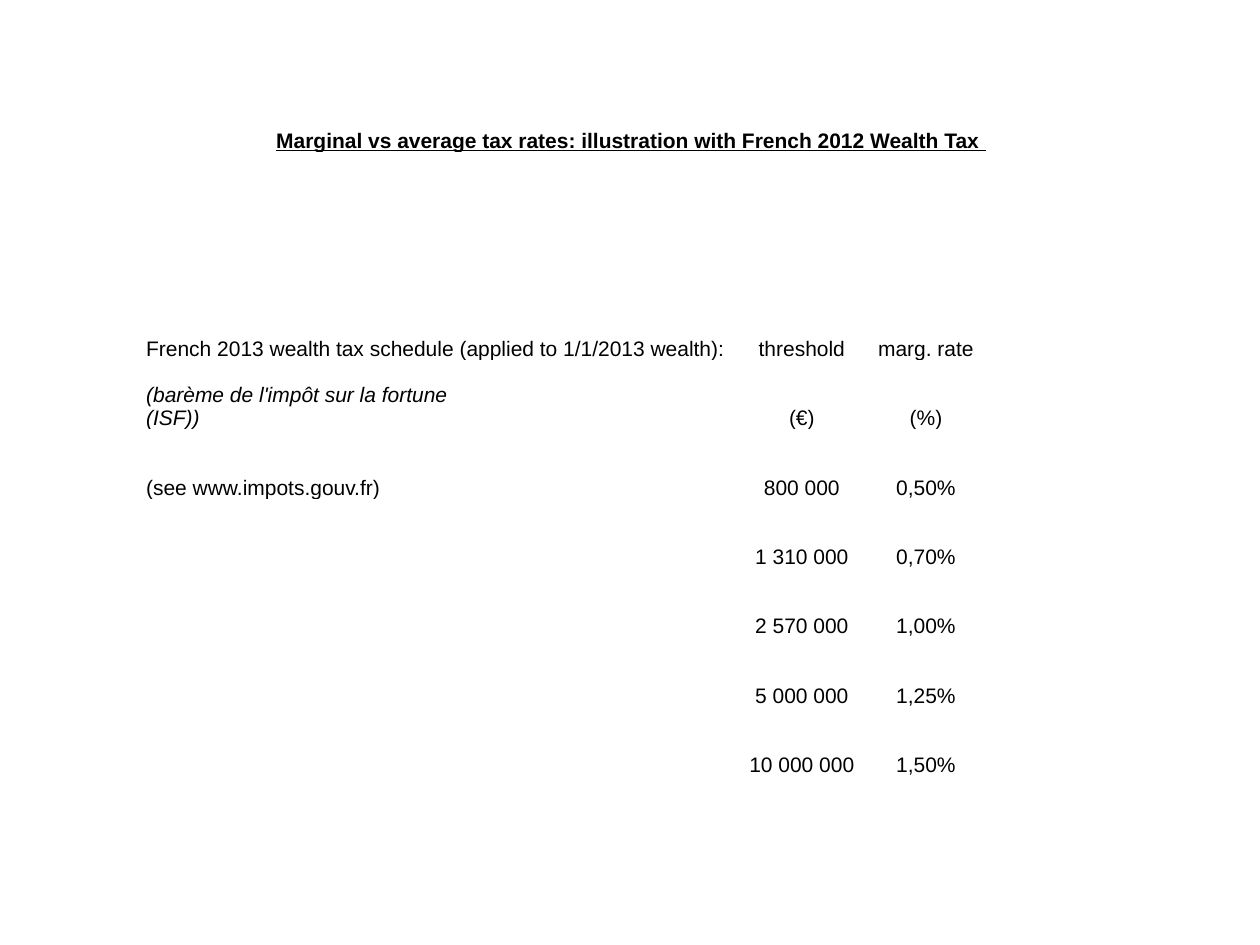
from pptx import Presentation
from pptx.dml.color import RGBColor
from pptx.enum.text import MSO_ANCHOR, PP_ALIGN
from pptx.util import Inches, Pt

BLACK = RGBColor(0x00, 0x00, 0x00)
LEFT, CENTER = PP_ALIGN.LEFT, PP_ALIGN.CENTER
BOTTOM = MSO_ANCHOR.BOTTOM

COL_WIDTHS = [0.94] * 5 + [1.03, 0.94, 1.05]
ROW_COUNT = 10
HEADER_ROW, THRESHOLD_COL = 3, 5

TITLE = "Marginal vs average tax rates: illustration with French 2012 Wealth Tax "
# text, columns spanned, font format
NOTES = [
    ("French 2013 wealth tax schedule (applied to 1/1/2013 wealth):", 5, {}),
    ("(barème de l'impôt sur la fortune (ISF))", 3, {"italic": True}),
    ("(see www.impots.gouv.fr)", 2, {}),
]
SCHEDULE = [
    ("threshold", "marg. rate"),
    ("(€)", "(%)"),
    ("800 000", "0,50%"),
    ("1 310 000", "0,70%"),
    ("2 570 000", "1,00%"),
    ("5 000 000", "1,25%"),
    ("10 000 000", "1,50%"),
]


def write_cell(cell, text, align=CENTER, **font_format):
    p = cell.text_frame.paragraphs[0]
    p.alignment = align
    r = p.add_run()
    r.text = text
    r.font.color.rgb = BLACK
    values = {"name": "Arial", "size": Pt(12), "bold": False} | font_format
    for name, value in values.items():
        setattr(r.font, name, value)


def add_plain_table(s, left, top, width, height):
    """Add a table without fills or banding, its text resting on the cell bottoms."""
    table = s.shapes.add_table(ROW_COUNT, len(COL_WIDTHS), left, top, width, height).table
    table.first_row = table.horz_banding = False
    for col, share in zip(table.columns, COL_WIDTHS):
        col.width = int(width * share / sum(COL_WIDTHS))
    cell_format = {
        "vertical_anchor": BOTTOM,
        "margin_left": Inches(0.01),
        "margin_right": Inches(0.01),
        "margin_top": Inches(0.01),
        "margin_bottom": 0,
    }
    for cell in table.iter_cells():
        cell.fill.background()
        for name, value in cell_format.items():
            setattr(cell, name, value)
    return table


def add_tax_schedule(s, left, top, width, height):
    table = add_plain_table(s, left, top, width, height)

    title = table.cell(0, 0)
    title.merge(table.cell(0, len(COL_WIDTHS) - 1))
    write_cell(title, TITLE, bold=True, underline=True)

    for row, (text, span, font_format) in enumerate(NOTES, HEADER_ROW):
        note = table.cell(row, 0)
        note.merge(table.cell(row, span - 1))
        write_cell(note, text, LEFT, **font_format)

    for row, pair in enumerate(SCHEDULE, HEADER_ROW):
        for col, text in enumerate(pair, THRESHOLD_COL):
            write_cell(table.cell(row, col), text)


def main():
    prs = Presentation()
    prs.slide_width, prs.slide_height = Inches(10), Inches(7.5)
    s = prs.slides.add_slide(prs.slide_layouts[6])
    add_tax_schedule(s, Inches(1.15), Inches(0.66), Inches(7.72), Inches(5.51))
    prs.save("out.pptx")


if __name__ == "__main__":
    main()
